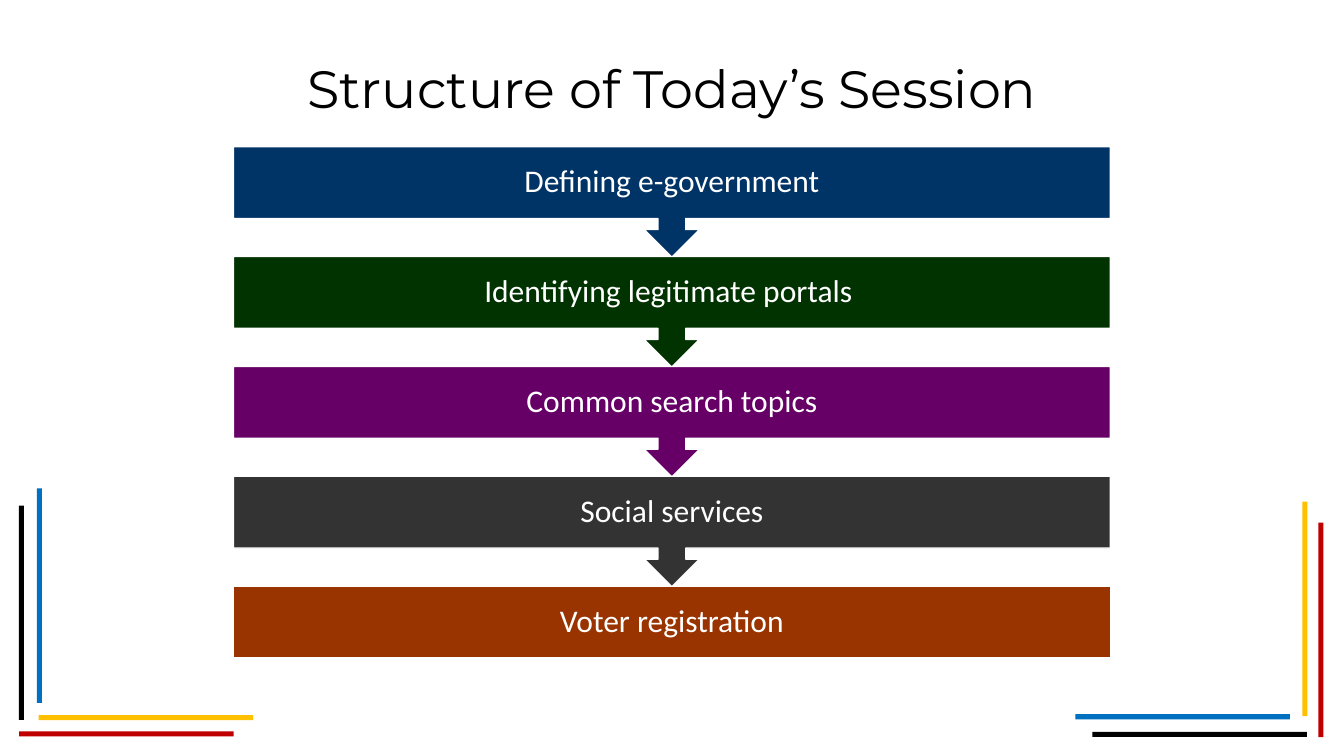
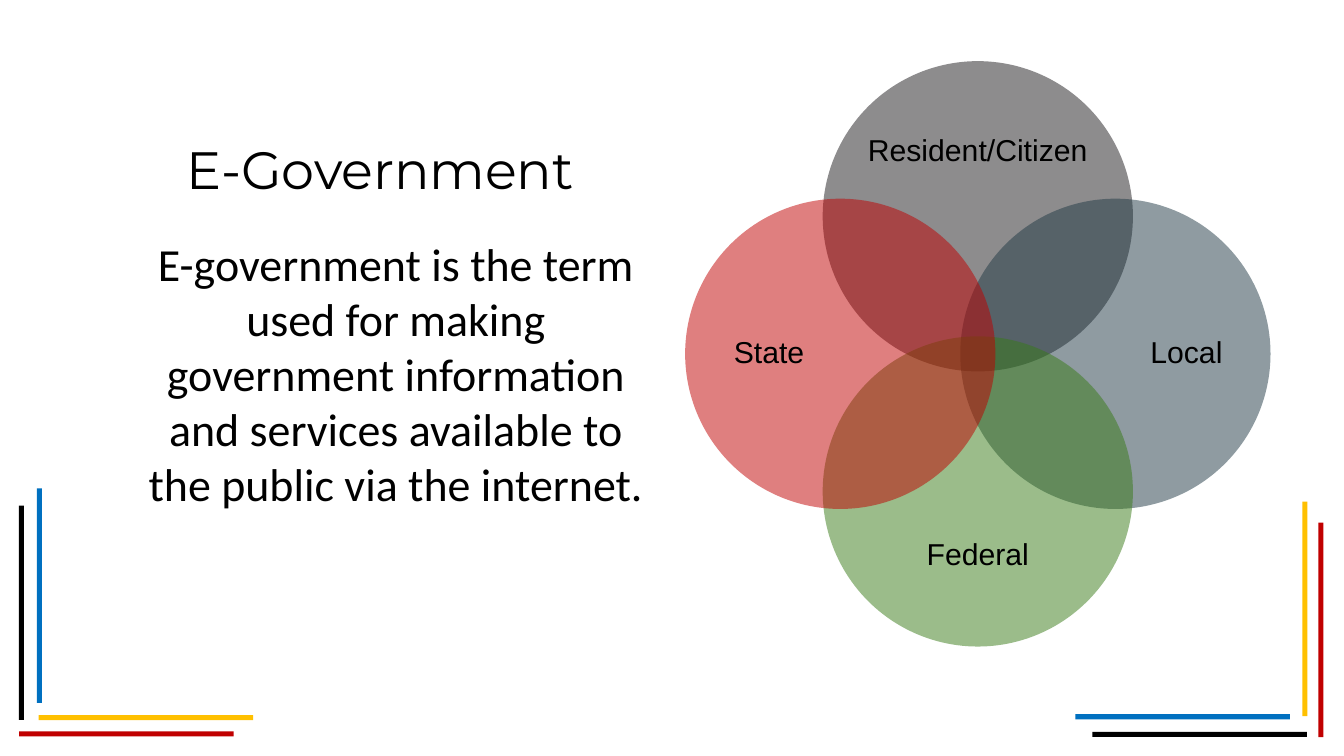
from lxml import etree
from pptx import Presentation
from pptx.dml.color import RGBColor
from pptx.enum.shapes import MSO_SHAPE
from pptx.enum.text import MSO_ANCHOR, MSO_AUTO_SIZE, PP_ALIGN
from pptx.oxml.ns import qn
from pptx.util import Pt

BLACK, WHITE = "000000", "FFFFFF"
RED, YELLOW, BLUE = "C00000", "FFC000", "0070C0"

BAR_LENGTH, BAR_THICKNESS = 163.4, 3.9
UPRIGHT = (BAR_THICKNESS, BAR_LENGTH)
FLAT = (BAR_LENGTH, BAR_THICKNESS)
CORNER_BARS = [
    (14.4, 385.2, UPRIGHT, BLACK),
    (14.6, 557.2, FLAT, RED),
    (29.5, 544.9, FLAT, YELLOW),
    (28.1, 372.2, UPRIGHT, BLUE),
    (832.3, 557.6, FLAT, BLACK),
    (1004.4, 398.2, UPRIGHT, RED),
    (992.2, 382.3, UPRIGHT, YELLOW),
    (819.4, 544.2, FLAT, BLUE),
]

SESSION_STEPS = [
    ("Defining e-government", "003366"),
    ("Identifying legitimate portals ", "003300"),
    ("Common search topics", "660066"),
    ("Social services", "333333"),
    ("Voter registration", "993300"),
]

# Name, colour, and direction from the centre of the diagram
GOVERNMENT_CIRCLES = [
    ("Resident/Citizen", "1D1A1D", (0, -1)),
    ("Local", "203945", (1, 0)),
    ("Federal", "387B17", (0, 1)),
    ("State", RED, (-1, 0)),
]


def paint(color_format, color):
    color_format.rgb = RGBColor.from_string(color)


def add_filled(page, kind, left, top, width, height, color):
    box = page.shapes.add_shape(kind, Pt(left), Pt(top), Pt(width), Pt(height))
    box.shadow.inherit = False
    box.fill.solid()
    paint(box.fill.fore_color, color)
    box.line.fill.background()
    return box


def write(box, text, font, size, color, margins=(7.2, 3.6), anchor=MSO_ANCHOR.MIDDLE,
          line_spacing=None):
    """Put one centred paragraph into a box; margins are (sides, top and bottom)."""
    frame = box.text_frame
    frame.word_wrap = True
    frame.auto_size = MSO_AUTO_SIZE.NONE
    frame.vertical_anchor = anchor
    frame.margin_left = frame.margin_right = Pt(margins[0])
    frame.margin_top = frame.margin_bottom = Pt(margins[1])
    para = frame.paragraphs[0]
    para.alignment = PP_ALIGN.CENTER
    para.space_before = Pt(0)
    if line_spacing:
        para.line_spacing = line_spacing
    span = para.add_run()
    span.text = text
    span.font.name = font
    span.font.size = Pt(size)
    paint(span.font.color, color)
    return para


def place(box, left, top, width, height):
    box.left, box.top, box.width, box.height = Pt(left), Pt(top), Pt(width), Pt(height)


def set_title(page, text, *bounds):
    place(page.shapes.title, *bounds)
    write(page.shapes.title, text, "Montserrat", 40, BLACK)


def add_corner_bars(deck, page):
    """Build the corner bars and move them to the master, so every slide shows them."""
    master_tree = deck.slide_master.shapes._spTree
    for number, (left, top, size, color) in enumerate(CORNER_BARS):
        element = add_filled(page, MSO_SHAPE.RECTANGLE, left, top, *size, color)._element
        element.nvSpPr.cNvPr.id = 20 + number
        master_tree.append(element)


def add_step_stack(page, left, top, width, height):
    """Stack the steps; all but the last are callouts pointing at the next one."""
    last = len(SESSION_STEPS) - 1
    bar_height = 54.8
    pitch = (height - bar_height) / last
    for index, (text, color) in enumerate(SESSION_STEPS):
        is_last = index == last
        kind = MSO_SHAPE.RECTANGLE if is_last else MSO_SHAPE.DOWN_ARROW_CALLOUT
        step = add_filled(page, kind, left, top + index * pitch, width,
                          bar_height if is_last else pitch + 0.5, color)
        paint(step.line.color, WHITE)
        step.line.width = Pt(1)
        write(step, text, "Calibri", 24, WHITE, (13.7, 13.7), line_spacing=0.9)


def make_translucent(box, percent):
    color = box.fill._xPr.find(qn("a:solidFill"))[0]
    etree.SubElement(color, qn("a:alpha")).set("val", str(percent * 1000))


def add_circle_diagram(page, left, top, size):
    """Overlap four circles in a cross, each labelled near its outer edge."""
    diameter = size * 0.53
    reach = (size - diameter) / 2
    center_x, center_y = left + size / 2, top + size / 2
    for text, color, (across, down) in GOVERNMENT_CIRCLES:
        circle = add_filled(page, MSO_SHAPE.OVAL,
                            center_x + across * reach - diameter / 2,
                            center_y + down * reach - diameter / 2,
                            diameter, diameter, color)
        make_translucent(circle, 50)
        width, height = (91, 182) if across else (182, 75)
        label = page.shapes.add_textbox(
            Pt(center_x + across * 159 - width / 2),
            Pt(center_y + down * 154 - height / 2), Pt(width), Pt(height))
        write(label, text, "Arial", 23, BLACK, (0, 0), line_spacing=0.9)


def add_definition(page, text, *bounds):
    body = page.placeholders[1]
    place(body, *bounds)
    para = write(body, text, "Calibri", 35, BLACK, (7.9, 3.6), MSO_ANCHOR.TOP)
    properties = para._p.get_or_add_pPr()
    properties.set("marL", "0")
    properties.set("indent", "0")
    etree.SubElement(properties, qn("a:buNone"))


def build_session_page(deck):
    page = deck.slides.add_slide(deck.slide_layouts[5])
    add_corner_bars(deck, page)
    set_title(page, "Structure of Today’s Session", 46, 21.6, 932, 90)
    add_step_stack(page, 177.8, 111.8, 668.2, 389.6)


def build_definition_page(deck):
    page = deck.slides.add_slide(deck.slide_layouts[1])
    set_title(page, "E-Government", -22.3, 66.2, 624.2, 123.8)
    add_circle_diagram(page, 522, 46.6, 446)
    add_definition(page, "E-government is the term used for making government information "
                   "and services available to the public via the internet.",
                   103.7, 175.7, 396, 234.7)


def main():
    deck = Presentation()
    deck.slide_width, deck.slide_height = Pt(1024), Pt(576)
    build_session_page(deck)
    build_definition_page(deck)
    deck.save("out.pptx")


if __name__ == "__main__":
    main()
